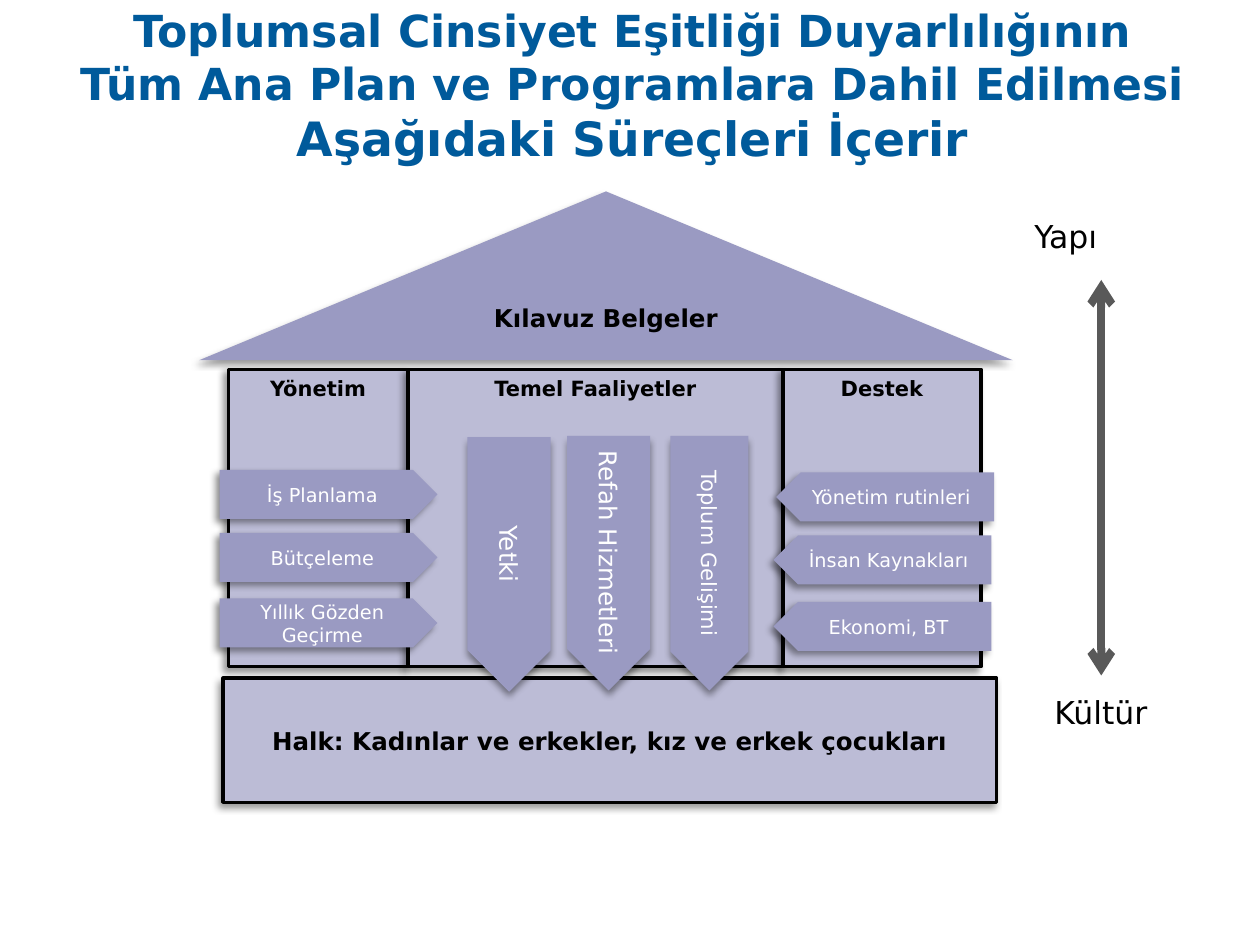
"""Build the slide showing gender mainstreaming as a house of processes."""
from lxml import etree
from pptx import Presentation
from pptx import util as u
from pptx.dml.color import RGBColor
from pptx.enum import shapes, text
from pptx.oxml import ns

THEME = {
    "font": "DejaVu Sans",
    "title": "005A9B", "ink": "000000", "paper": "FFFFFF",
    "wall": "BCBCD6", "part": "9A9AC2", "arrow": "595959",
    "title_size": 25.2, "title_large": 27, "label_size": 18,
    "head_size": 14, "column_size": 12, "plate_size": 11,
}
TITLE = [
    ("Toplumsal Cinsiyet Eşitliği Duyarlılığının Tüm Ana Plan ve Programlara Dahil Edilmesi ",
     THEME["title_size"]),
    ("Aşağıdaki Süreçleri İçerir", THEME["title_large"]),
]
ROOF = ("Kılavuz Belgeler", (113.8, 109.4, 465, 96.5))
BASE = ("Halk: Kadınlar ve erkekler, kız ve erkek çocukları", (127.5, 387.5, 442, 71))
COLUMNS = [("Yönetim", 102.5), ("Temel Faaliyetler", 214.5), ("Destek", 113)]
COLUMN_LEFT, COLUMN_TOP, COLUMN_HEIGHT = 130.5, 211, 170
PLATE_WIDTH, PLATE_HEIGHT = 124.5, 28
MANAGEMENT = [
    ("İş Planlama", 125.5, 268.5),
    ("Bütçeleme", 125.5, 304.5),
    ("Yıllık Gözden Geçirme", 125.5, 342),
]
SUPPORT = [
    ("Yönetim rutinleri", 443.5, 270),
    ("İnsan Kaynakları", 442, 306),
    ("Ekonomi, BT", 442, 344),
]
ACTIVITY_LENGTH = 145.5
ACTIVITIES = [
    ("Refah Hizmetleri", 347.8, 321.8, 47.5, THEME["head_size"]),
    ("Toplum Gelişimi", 405.4, 321.8, 44.6, THEME["column_size"]),
    ("Yetki", 290.9, 322.5, 47.5, THEME["head_size"]),
]
LABELS = [("Yapı", (584, 120.2, 52, 29)), ("Kültür", (595.4, 392.4, 70, 29))]
AXIS = (629.3, 160, 386)


def points(*lengths):
    return [u.Pt(length) for length in lengths]


def style(span, size, color, bold=False):
    span.font.name = THEME["font"]
    span.font.size = u.Pt(size)
    span.font.bold = bold
    span.font.color.rgb = RGBColor.from_string(color)


def add_shadow(shape, direction):
    shape.shadow.inherit = False
    effects = shape._element.spPr.find(ns.qn("a:effectLst"))
    shadow = etree.SubElement(
        effects, ns.qn("a:outerShdw"), blurRad=str(u.Pt(4)), dist=str(u.Pt(3)),
        dir=str(direction * 60000), algn="ctr", rotWithShape="0")
    color = etree.SubElement(shadow, ns.qn("a:srgbClr"), val=THEME["ink"])
    etree.SubElement(color, ns.qn("a:alpha"), val="40000")


def add_part(page, kind, wording, place, size, color="paper", fill="part", bold=False,
             anchor=text.MSO_ANCHOR.MIDDLE, rotation=0, direction=135):
    part = page.shapes.add_shape(kind, *points(*place))
    part.rotation = rotation
    part.fill.solid()
    part.fill.fore_color.rgb = RGBColor.from_string(THEME[fill])
    if fill == "wall":
        part.line.color.rgb = RGBColor.from_string(THEME["ink"])
        part.line.width = u.Pt(2)
    else:
        part.line.fill.background()
    add_shadow(part, direction)
    frame = part.text_frame
    frame.word_wrap = True
    frame.vertical_anchor = anchor
    frame.text = wording
    para = frame.paragraphs[0]
    para.alignment = text.PP_ALIGN.CENTER
    style(para.runs[0], size, THEME[color], bold)
    return part


def add_title(page):
    title = page.shapes.title
    title.left, title.top, title.width, title.height = points(37.5, 8.6, 648, 90)
    frame = title.text_frame
    frame.word_wrap = True
    frame.auto_size = text.MSO_AUTO_SIZE.NONE
    frame.vertical_anchor = text.MSO_ANCHOR.BOTTOM
    para = frame.paragraphs[0]
    para.alignment = text.PP_ALIGN.CENTER
    for wording, size in TITLE:
        span = para.add_run()
        span.text = wording
        style(span, size, THEME["title"], True)


def add_house(page):
    kinds = shapes.MSO_SHAPE
    plate = kinds.PENTAGON
    add_part(page, kinds.RECTANGLE, *BASE, THEME["head_size"], "ink", "wall", True)
    left = COLUMN_LEFT
    for wording, width in COLUMNS:
        add_part(page, kinds.RECTANGLE, wording, (left, COLUMN_TOP, width, COLUMN_HEIGHT),
                 THEME["column_size"], "ink", "wall", True, text.MSO_ANCHOR.TOP)
        left += width
    for plates, rotation in ((MANAGEMENT, 0), (SUPPORT, 180)):
        for wording, x, y in plates:
            part = add_part(page, plate, wording, (x, y, PLATE_WIDTH, PLATE_HEIGHT),
                            THEME["plate_size"], rotation=rotation)
            if rotation:
                part._element.spPr.find(ns.qn("a:xfrm")).set("flipV", "1")
    for wording, x, y, breadth, size in ACTIVITIES:
        place = (x - ACTIVITY_LENGTH / 2, y - breadth / 2, ACTIVITY_LENGTH, breadth)
        add_part(page, plate, wording, place, size, rotation=90, direction=90)
    add_part(page, kinds.ISOSCELES_TRIANGLE, *ROOF, THEME["head_size"], "ink", bold=True)


def add_axis(page):
    for wording, place in LABELS:
        box = page.shapes.add_textbox(*points(*place))
        box.text_frame.word_wrap = False
        box.text_frame.auto_size = text.MSO_AUTO_SIZE.SHAPE_TO_FIT_TEXT
        box.text_frame.text = wording
        style(box.text_frame.paragraphs[0].runs[0], THEME["label_size"], THEME["ink"])
    x, top, bottom = AXIS
    axis = page.shapes.add_connector(shapes.MSO_CONNECTOR.STRAIGHT, *points(x, top, x, bottom))
    axis.line.color.rgb = RGBColor.from_string(THEME["arrow"])
    axis.line.width = u.Pt(4.5)
    properties = axis._element.spPr
    for end in ("a:headEnd", "a:tailEnd"):
        etree.SubElement(properties.find(ns.qn("a:ln")), ns.qn(end), type="arrow")
    etree.SubElement(properties, ns.qn("a:effectLst"))


def main():
    deck = Presentation()
    deck.slide_width, deck.slide_height = points(720, 540)
    page = deck.slides.add_slide(deck.slide_layouts[5])
    add_title(page)
    add_axis(page)
    add_house(page)
    deck.save("out.pptx")


if __name__ == "__main__":
    main()
